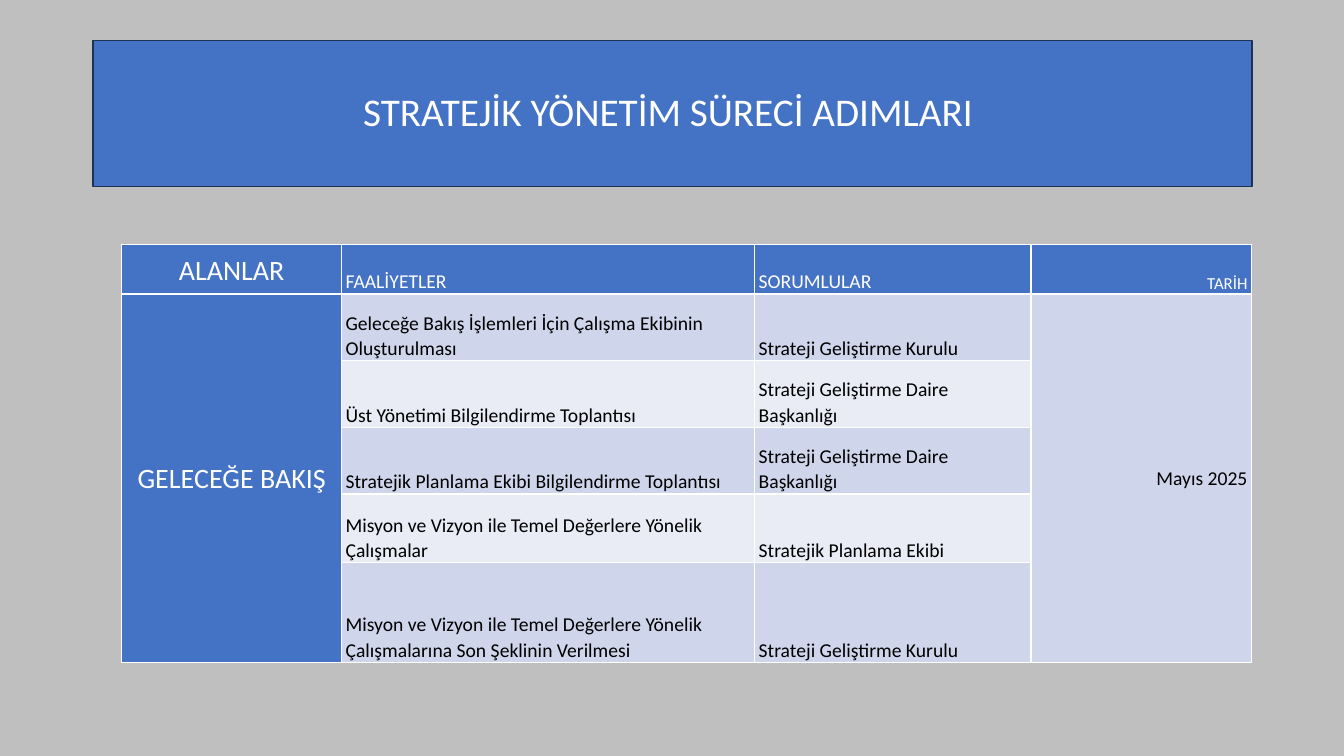
from dataclasses import dataclass

from lxml.etree import SubElement
from pptx import Presentation
from pptx.dml.color import RGBColor
from pptx.enum.shapes import MSO_SHAPE
from pptx.enum.text import MSO_ANCHOR as Anchor, PP_ALIGN as Align
from pptx.oxml.ns import qn
from pptx.util import Cm, Pt

GREY = RGBColor(0xBF, 0xBF, 0xBF)
BLUE = RGBColor(0x44, 0x72, 0xC4)
NAVY = RGBColor(0x1E, 0x32, 0x56)
DARK_BAND = RGBColor(0xCF, 0xD5, 0xEA)
LIGHT_BAND = RGBColor(0xE9, 0xEB, 0xF5)
WHITE = RGBColor(0xFF, 0xFF, 0xFF)
BLACK = RGBColor(0, 0, 0)
FONT = "Calibri"

COL_WIDTHS = (5.54, 10.41, 6.96, 5.56)
ROW_HEIGHTS = (1.24, 1.68, 1.68, 1.68, 1.73, 2.51)
AREA_COL, DATE_COL = 0, 3


@dataclass(frozen=True)
class CellText:
    text: str
    size: int = 14
    color: RGBColor = BLACK
    align: Align = Align.LEFT
    anchor: Anchor = Anchor.BOTTOM


HEADERS = (
    CellText("ALANLAR", 20, WHITE, Align.CENTER, Anchor.MIDDLE),
    CellText("FAALİYETLER", color=WHITE),
    CellText("SORUMLULAR", color=WHITE),
    CellText("TARİH", 12, WHITE, Align.RIGHT),
)
AREA = CellText("GELECEĞE BAKIŞ", 20, WHITE, Align.CENTER, Anchor.MIDDLE)
DATE = CellText("Mayıs 2025", align=Align.RIGHT, anchor=Anchor.MIDDLE)
ACTIVITIES = (
    ("Geleceğe Bakış İşlemleri İçin Çalışma Ekibinin Oluşturulması",
     "Strateji Geliştirme Kurulu"),
    ("Üst Yönetimi Bilgilendirme Toplantısı",
     "Strateji Geliştirme Daire Başkanlığı"),
    ("Stratejik Planlama Ekibi Bilgilendirme Toplantısı",
     "Strateji Geliştirme Daire Başkanlığı"),
    ("Misyon ve Vizyon ile Temel Değerlere Yönelik Çalışmalar",
     "Stratejik Planlama Ekibi"),
    ("Misyon ve Vizyon ile Temel Değerlere Yönelik Çalışmalarına Son Şeklinin Verilmesi",
     "Strateji Geliştirme Kurulu"),
)


def write(p, text: str, size: int, color: RGBColor, align: Align, spacing: float) -> None:
    p.text = text
    p.alignment = align
    p.line_spacing = spacing
    p.font.name = FONT
    p.font.size = Pt(size)
    p.font.bold = False
    p.font.color.rgb = color


def add_title(s) -> None:
    sp = s.shapes.add_shape(MSO_SHAPE.RECTANGLE, Cm(2.34), Cm(1.02), Cm(29.21), Cm(3.68))
    sp.shadow.inherit = False
    sp.fill.solid()
    sp.fill.fore_color.rgb = BLUE
    sp.line.color.rgb = NAVY
    sp.line.width = Pt(1)
    tf = sp.text_frame
    tf.word_wrap = True
    tf.vertical_anchor = Anchor.MIDDLE
    write(tf.paragraphs[0], "STRATEJİK YÖNETİM SÜRECİ ADIMLARI ", 28, WHITE, Align.CENTER, 0.9)


def style_cell(cell, fill: RGBColor) -> None:
    cell.margin_left = cell.margin_right = Cm(0.1)
    cell.margin_top = cell.margin_bottom = 0
    tc_pr = cell._tc.get_or_add_tcPr()
    for side in ("a:lnL", "a:lnR", "a:lnT", "a:lnB"):
        ln = SubElement(tc_pr, qn(side), w=str(Pt(1)))
        SubElement(SubElement(ln, qn("a:solidFill")), qn("a:srgbClr"), val=str(WHITE))
    cell.fill.solid()
    cell.fill.fore_color.rgb = fill


def fill_cell(cell, content: CellText) -> None:
    cell.vertical_anchor = content.anchor
    write(cell.text_frame.paragraphs[0], content.text, content.size,
          content.color, content.align, 1.07)


def cell_color(row: int, col: int) -> RGBColor:
    if row == 0 or col == AREA_COL:
        return BLUE
    return DARK_BAND if col == DATE_COL or row % 2 else LIGHT_BAND


def add_schedule(s) -> None:
    n_rows, n_cols = len(ROW_HEIGHTS), len(COL_WIDTHS)
    table = s.shapes.add_table(n_rows, n_cols, Cm(3.07), Cm(6.17),
                               Cm(sum(COL_WIDTHS)), Cm(sum(ROW_HEIGHTS))).table
    for column, width in zip(table.columns, COL_WIDTHS):
        column.width = Cm(width)
    for row, height in zip(table.rows, ROW_HEIGHTS):
        row.height = Cm(height)
    for r in range(n_rows):
        for c in range(n_cols):
            style_cell(table.cell(r, c), cell_color(r, c))
    for c, header in enumerate(HEADERS):
        fill_cell(table.cell(0, c), header)
    for r, texts in enumerate(ACTIVITIES, 1):
        for c, text in enumerate(texts, 1):
            fill_cell(table.cell(r, c), CellText(text))
    for c, content in ((AREA_COL, AREA), (DATE_COL, DATE)):
        table.cell(1, c).merge(table.cell(n_rows - 1, c))
        fill_cell(table.cell(1, c), content)


def main() -> None:
    prs = Presentation()
    prs.slide_width, prs.slide_height = Cm(33.87), Cm(19.05)
    s = prs.slides.add_slide(prs.slide_layouts[6])
    s.background.fill.solid()
    s.background.fill.fore_color.rgb = GREY
    add_title(s)
    add_schedule(s)
    prs.save("out.pptx")


if __name__ == "__main__":
    main()
